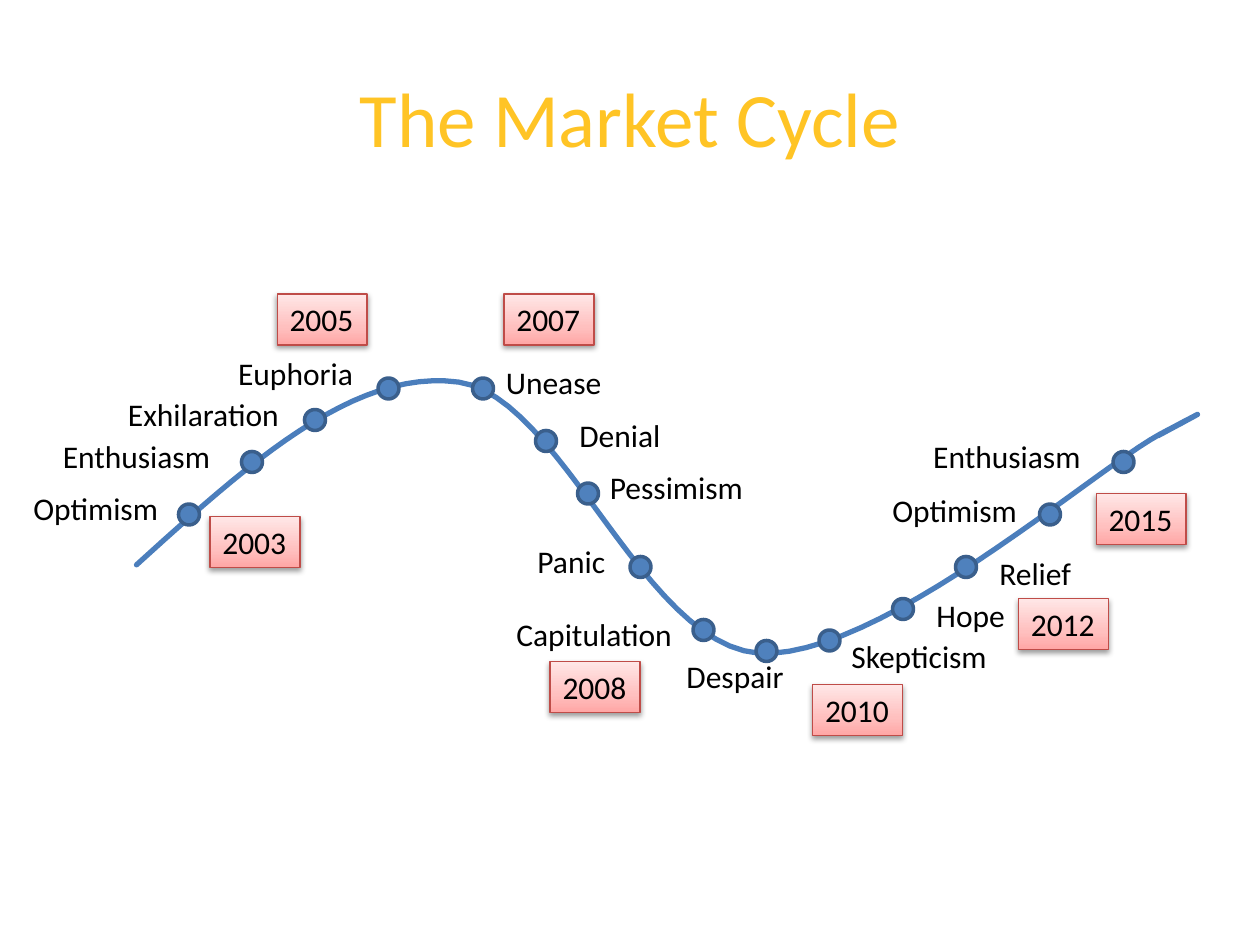
from dataclasses import dataclass

from lxml import etree
from pptx import Presentation
from pptx.dml.color import RGBColor
from pptx.enum.shapes import MSO_SHAPE
from pptx.enum.text import MSO_ANCHOR, MSO_AUTO_SIZE, PP_ALIGN
from pptx.oxml.ns import qn
from pptx.util import Inches, Pt

OVAL, RECTANGLE = MSO_SHAPE.OVAL, MSO_SHAPE.RECTANGLE
LEFT, CENTER = PP_ALIGN.LEFT, PP_ALIGN.CENTER
TOP, MIDDLE = MSO_ANCHOR.TOP, MSO_ANCHOR.MIDDLE
FIT_SHAPE, FIT_NONE = MSO_AUTO_SIZE.SHAPE_TO_FIT_TEXT, MSO_AUTO_SIZE.NONE

# The slide is a grid of 120 columns by 90 rows, twelve to the inch
COLUMNS, ROWS, CELL = 120, 90, Inches(1) / 12
BOX_HEIGHT, YEAR_WIDTH, MARKER_SIZE = 4.85, 8.57, 2


@dataclass(frozen=True)
class Theme:
    font: str = "Calibri"
    title_size: int = 44
    body_size: int = 18
    title: str = "FFC425"
    text: str = "000000"
    curve: str = "4B7EBC"
    marker: str = "4F81BD"
    marker_line: str = "3A5F8C"
    year_line: str = "BF4C48"
    year_stops: tuple = ((0, "FFA6A5"), (35, "FFC0BF"), (100, "FFE7E7"))


# Start point, then two control points and an end point per section
CURVE_START = (13, 53.8)
CURVE_SECTIONS = [
    ((23.4, 44.4), (33.7, 35), (43.7, 36.4)),
    ((53.5, 37.8), (61.2, 61.3), (72.2, 62.2)),
    ((83.4, 63), (104, 44.9), (110.4, 41.4)),
    ((116.8, 38), (113.5, 39.8), (110.3, 41.5)),
]

# Stage, marker column and row, label column, row and width
STAGES = [
    ("Optimism", 17, 48, 2, 46, 14.4),
    ("Enthusiasm", 23, 43, 4.8, 41, 16.6),
    ("Exhilaration", 29, 39, 11, 37, 16.9),
    ("Euphoria", 36, 36, 21.5, 33.1, 13.4),
    ("Unease", 45, 36, 47, 34, 11.6),
    ("Denial", 51, 41, 54, 39, 10.2),
    ("Pessimism", 55, 46, 56.9, 44, 15.2),
    ("Panic", 60, 53, 50, 51, 9),
    ("Capitulation", 66, 59, 48, 58, 17.4),
    ("Despair", 72, 61, 64.2, 62, 11.8),
    ("Skepticism", 78, 60, 79.9, 60.1, 15.5),
    ("Hope", 85, 57, 88, 56.2, 9),
    ("Relief", 91, 53, 94, 52.2, 9.4),
    ("Optimism", 99, 48, 83.8, 46.2, 14.4),
    ("Enthusiasm", 106, 43, 87.7, 41, 16.6),
]

YEARS = [
    ("2003", 20, 49.2), ("2005", 26.4, 28), ("2007", 48, 28), ("2008", 52.4, 63),
    ("2010", 77.4, 65.2), ("2012", 97, 57), ("2015", 104.4, 47),
]


def grid(*values):
    return [round(value * CELL) for value in values]


def color(code):
    return RGBColor.from_string(code)


def add_color(parent, code):
    return etree.SubElement(parent, qn("a:srgbClr"), val=code)


def bezier(points, steps=24):
    """Points along a cubic curve, without its first one."""
    for step in range(1, steps + 1):
        t = step / steps
        weights = ((1 - t) ** 3, 3 * t * (1 - t) ** 2, 3 * t**2 * (1 - t), t**3)
        yield tuple(sum(w * p[axis] for w, p in zip(weights, points)) for axis in (0, 1))


def write_text(shape, text, *, font, size, code, align=LEFT, anchor=TOP,
               wrap=False, auto_size=FIT_SHAPE):
    frame = shape.text_frame
    frame.word_wrap, frame.auto_size, frame.vertical_anchor = wrap, auto_size, anchor
    paragraph = frame.paragraphs[0]
    paragraph.alignment = align
    run = paragraph.add_run()
    run.text = text
    run.font.name, run.font.size = font, Pt(size)
    run.font.color.rgb = color(code)


class SlideBuilder:
    def __init__(self, slide, theme):
        self.slide, self.theme = slide, theme

    def outline(self, shape, code, width):
        shape.line.color.rgb = color(code)
        shape.line.width = Pt(width)
        shape.shadow.inherit = False

    def title(self, text):
        box = self.slide.shapes.add_textbox(*grid(6, 3.6, 108, 15))
        write_text(box, text, font=self.theme.font, size=self.theme.title_size,
                   code=self.theme.title, align=CENTER, anchor=MIDDLE,
                   wrap=True, auto_size=FIT_NONE)

    def label(self, text, column, row, width):
        box = self.slide.shapes.add_textbox(*grid(column, row, width, BOX_HEIGHT))
        write_text(box, text, font=self.theme.font, size=self.theme.body_size,
                   code=self.theme.text)

    def curve(self, start, sections):
        builder = self.slide.shapes.build_freeform(*grid(*start))
        for section in sections:
            points = [grid(*point) for point in bezier((start, *section))]
            builder.add_line_segments(points, close=False)
            start = section[-1]
        shape = builder.convert_to_shape()
        shape.fill.background()
        self.outline(shape, self.theme.curve, 3)
        line = shape.line._get_or_add_ln()
        line.set("cap", "rnd")
        etree.SubElement(line, qn("a:round"))

    def marker(self, column, row):
        shape = self.slide.shapes.add_shape(
            OVAL, *grid(column, row, MARKER_SIZE, MARKER_SIZE))
        shape.fill.solid()
        shape.fill.fore_color.rgb = color(self.theme.marker)
        self.outline(shape, self.theme.marker_line, 2)

    def year(self, text, column, row):
        shape = self.slide.shapes.add_shape(
            RECTANGLE, *grid(column, row, YEAR_WIDTH, BOX_HEIGHT))
        self.outline(shape, self.theme.year_line, 0.75)
        # Three-stop gradient, darkest at the bottom
        shape.fill.gradient()
        shape.fill.gradient_angle = 90
        properties = shape._element.spPr
        stops = properties.find(".//" + qn("a:gsLst"))
        for stop in list(stops):
            stops.remove(stop)
        for position, code in self.theme.year_stops:
            add_color(etree.SubElement(stops, qn("a:gs"), pos=str(position * 1000)), code)
        # Soft shadow below
        shadow = etree.SubElement(
            properties.find(qn("a:effectLst")), qn("a:outerShdw"),
            blurRad="40000", dist="20000", dir="5400000", rotWithShape="0")
        etree.SubElement(add_color(shadow, "000000"), qn("a:alpha"), val="38000")
        write_text(shape, text, font=self.theme.font, size=self.theme.body_size,
                   code=self.theme.text)


def main():
    presentation = Presentation()
    presentation.slide_width, presentation.slide_height = grid(COLUMNS, ROWS)
    slide = presentation.slides.add_slide(presentation.slide_layouts[6])
    builder = SlideBuilder(slide, Theme())

    # Cycle curve with its stages
    builder.curve(CURVE_START, CURVE_SECTIONS)
    for name, marker_column, marker_row, *label_place in STAGES:
        builder.label(name, *label_place)
        builder.marker(marker_column, marker_row)

    # Years and title
    for year in YEARS:
        builder.year(*year)
    builder.title("The Market Cycle")
    presentation.save("out.pptx")


if __name__ == "__main__":
    main()
